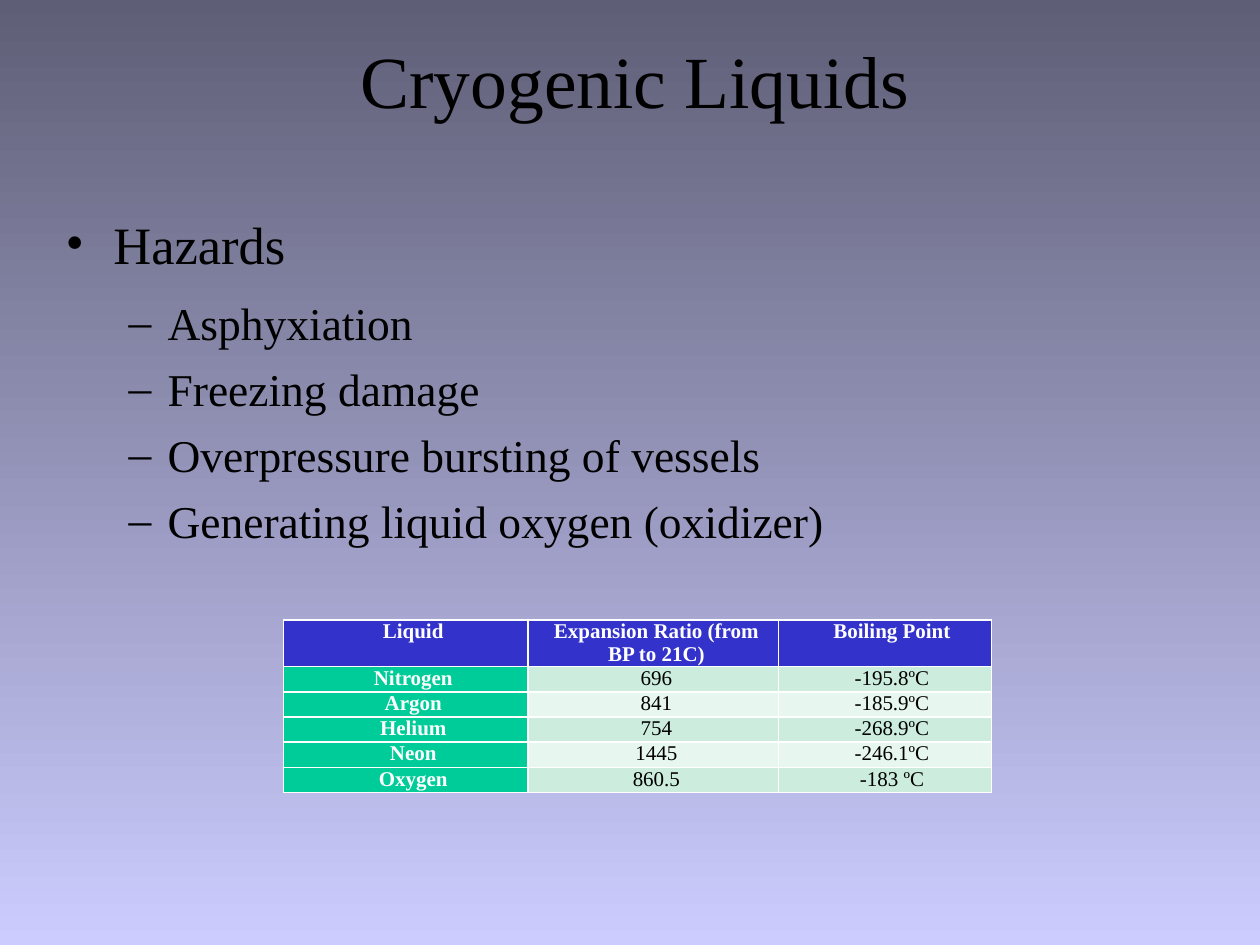
from lxml.etree import SubElement
from pptx import Presentation
from pptx.dml.color import RGBColor
from pptx.enum.text import MSO_ANCHOR, MSO_AUTO_SIZE, PP_ALIGN
from pptx.oxml.ns import qn
from pptx.util import Inches, Pt

FONT = "Times New Roman"
BLACK = RGBColor(0x00, 0x00, 0x00)
WHITE = RGBColor(0xFF, 0xFF, 0xFF)
SLATE = RGBColor(0x5E, 0x5E, 0x76)
LAVENDER = RGBColor(0xCC, 0xCC, 0xFF)
BLUE = RGBColor(0x33, 0x33, 0xCC)
GREEN = RGBColor(0x00, 0xCC, 0x99)
MINT = RGBColor(0xCC, 0xEC, 0xDE)
PALE_MINT = RGBColor(0xE7, 0xF6, 0xEF)


def write(para, text, size, color=BLACK, bold=False, align=PP_ALIGN.LEFT):
    para.alignment = align
    span = para.add_run()
    span.text = text
    span.font.name = FONT
    span.font.size = Pt(size)
    span.font.color.rgb = color
    span.font.bold = bold


def set_indent(para, left, first=0, bullet=None):
    properties = para._p.get_or_add_pPr()
    properties.set("marL", str(Inches(left)))
    properties.set("indent", str(Inches(first)))
    if bullet:
        SubElement(properties, qn("a:buFont"), typeface=FONT)
        SubElement(properties, qn("a:buChar"), char=bullet)


deck = Presentation()
deck.slide_width = Inches(10)
deck.slide_height = Inches(7.5)
page = deck.slides.add_slide(deck.slide_layouts[1])

backdrop = page.background.fill
backdrop.gradient()
backdrop.gradient_angle = 270
for stop, color in zip(backdrop.gradient_stops, (SLATE, LAVENDER)):
    stop.color.rgb = color
backdrop.gradient_stops[0].position = 0
backdrop.gradient_stops[1].position = 1

# Title
title = page.shapes.title
title.left, title.top = Inches(1.5), Inches(0)
title.width, title.height = Inches(7.08), Inches(1.25)
title.text_frame.auto_size = MSO_AUTO_SIZE.NONE
title.text_frame.vertical_anchor = MSO_ANCHOR.MIDDLE
write(title.text_frame.paragraphs[0], "Cryogenic Liquids", 42, align=PP_ALIGN.CENTER)

# Hazard list
body = page.placeholders[1]
body.left, body.top = Inches(0.42), Inches(1.58)
body.width, body.height = Inches(9.17), Inches(5.67)
frame = body.text_frame
frame.auto_size = MSO_AUTO_SIZE.NONE
frame.margin_top = Inches(0.1)
heading = frame.paragraphs[0]
heading.space_before = Pt(0)
heading.space_after = Pt(10)
set_indent(heading, 0.38, -0.38, "•")
write(heading, "Hazards", 30)

hazards = [
    "Asphyxiation",
    "Freezing damage",
    "Overpressure bursting of vessels",
    "Generating liquid oxygen (oxidizer)",
]
for hazard in hazards:
    para = frame.add_paragraph()
    para.level = 1
    para.space_before = Pt(1.5)
    para.space_after = Pt(5)
    set_indent(para, 0.81, -0.31, "–")
    write(para, hazard, 26)

# Table of liquids
rows = [
    ("Liquid", "Expansion Ratio (from BP to 21C)", "Boiling Point"),
    ("Nitrogen", "696", "-195.8ºC"),
    ("Argon", "841", "-185.9ºC"),
    ("Helium", "754", "-268.9ºC"),
    ("Neon", "1445", "-246.1ºC"),
    ("Oxygen", "860.5", "-183 ºC"),
]
column_widths = (1.94, 1.99, 1.69)
cell_indents = (0.12, 0.05, 0.11)
table = page.shapes.add_table(
    len(rows), len(column_widths), Inches(2.25), Inches(4.92), Inches(5.62), Inches(1.2)
).table
table.first_col = True
for column, width in zip(table.columns, column_widths):
    column.width = Inches(width)
for row_index, row in enumerate(rows):
    table.rows[row_index].height = Inches(0.2)
    for column_index, text in enumerate(row):
        cell = table.cell(row_index, column_index)
        cell.margin_left = cell.margin_right = Inches(0.07)
        cell.margin_top = cell.margin_bottom = Inches(0)
        is_label = row_index == 0 or column_index == 0
        if row_index == 0:
            shade = BLUE
        elif column_index == 0:
            shade = GREEN
        else:
            shade = MINT if row_index % 2 else PALE_MINT
        cell.fill.solid()
        cell.fill.fore_color.rgb = shade
        para = cell.text_frame.paragraphs[0]
        set_indent(para, cell_indents[column_index])
        write(para, text, 12, WHITE if is_label else BLACK, is_label, PP_ALIGN.CENTER)

deck.save("out.pptx")
